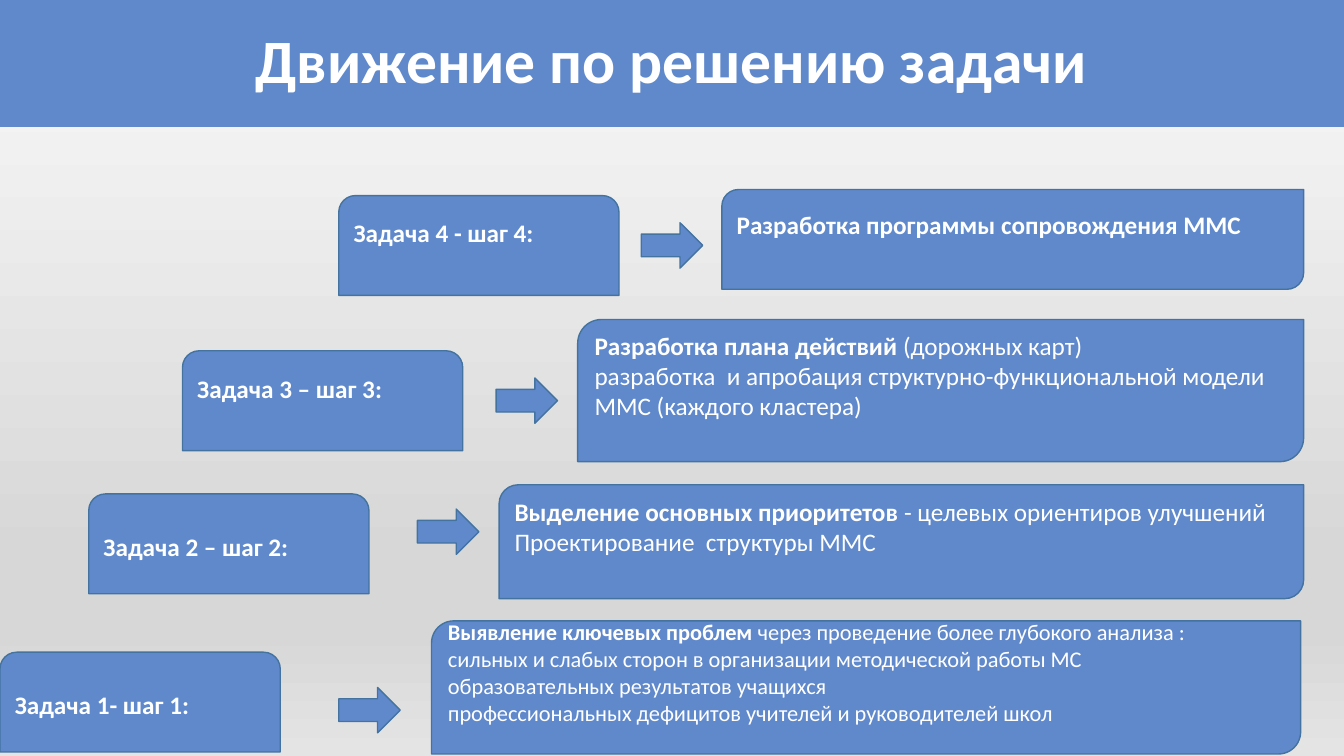
import copy
from dataclasses import dataclass

import pptx
import pptx.dml.color
import pptx.enum.shapes
import pptx.enum.text
import pptx.oxml.ns
import pptx.util

Inches = pptx.util.Inches
Pt = pptx.util.Pt
Color = pptx.dml.color.RGBColor.from_string
Shape = pptx.enum.shapes.MSO_SHAPE
Align = pptx.enum.text.PP_ALIGN


@dataclass(frozen=True)
class Theme:
    """Colours, type sizes and font of the slide."""
    fill: str = "6089CC"
    line: str = "43739E"
    text: str = "FFFFFF"
    background: tuple = ((0, "FAFAFA"), (0.74, "D7D7D7"), (0.83, "D7D7D7"), (1, "E4E4E4"))
    font: str = "Calibri"
    title: int = 44
    body: int = 18
    small: int = 16


@dataclass(frozen=True)
class Step:
    """Boxes and wording of one step; each result line is a bold and a plain part."""
    label: str
    label_box: tuple
    label_lift: float
    arrow_at: tuple
    result_box: tuple
    result: tuple
    size: int


THEME = Theme()
LABEL_SIZE = (2.78, 0.99)
ARROW_SIZE = (0.61, 0.45)
LIFT = 0.3
TITLE = "Движение по решению задачи"

STEPS = (
    Step("Задача 1- шаг 1:", (0, 6.47, *LABEL_SIZE), 0, (3.36, 6.82),
         (4.28, 6.16, 8.62, 1.32),
         (("Выявление ключевых проблем ", "через проведение более глубокого анализа :"),
          ("", "сильных и слабых сторон в организации методической работы МС"),
          ("", "образовательных результатов учащихся"),
          ("", "профессиональных дефицитов учителей и руководителей школ")),
         THEME.small),
    Step("Задача 2 – шаг 2:", (0.88, 4.9, *LABEL_SIZE), 0, (4.14, 5.05),
         (4.95, 4.81, 7.98, 1.13),
         (("Выделение основных приоритетов ", "- целевых ориентиров улучшений"),
          ("", "Проектирование  структуры ММС")),
         THEME.body),
    Step("Задача 3 – шаг 3:", (1.81, 3.48, *LABEL_SIZE), LIFT, (4.92, 3.75),
         (5.73, 3.17, 7.2, 1.41),
         (("Разработка плана действий ", "(дорожных карт)"),
          ("", "разработка  и апробация структурно-функциональной модели "
               "ММС (каждого кластера)")),
         THEME.body),
    Step("Задача 4 - шаг 4:", (3.36, 1.94, *LABEL_SIZE), LIFT, (6.36, 2.21),
         (7.16, 1.88, 5.77, 0.99),
         (("Разработка программы сопровождения ММС", ""),),
         THEME.body),
)


def style_span(span, size, bold):
    """Apply the theme's font to a run."""
    span.font.name = THEME.font
    span.font.size = Pt(size)
    span.font.bold = bold
    span.font.color.rgb = Color(THEME.text)


def paint_background(page):
    """Fill the page with the theme's vertical gradient."""
    fill = page.background.fill
    fill.gradient()
    fill.gradient_angle = 270
    stop_list = next(page.element.iter(pptx.oxml.ns.qn("a:gsLst")))
    while len(stop_list) < len(THEME.background):
        stop_list.append(copy.deepcopy(stop_list[0]))
    for stop, (position, color) in zip(fill.gradient_stops, THEME.background):
        stop.position = position
        stop.color.rgb = Color(color)


def add_title(page, box):
    """Turn the title placeholder into a banner."""
    title = page.shapes.title
    title.left, title.top, title.width, title.height = map(Inches, box)
    title.fill.solid()
    title.fill.fore_color.rgb = Color(THEME.fill)
    frame = title.text_frame
    frame.text = TITLE
    frame.auto_size = pptx.enum.text.MSO_AUTO_SIZE.NONE
    frame.vertical_anchor = pptx.enum.text.MSO_ANCHOR.MIDDLE
    para = frame.paragraphs[0]
    para.alignment = Align.CENTER
    para.line_spacing = 0.9
    style_span(para.runs[0], THEME.title, True)


def add_block(page, kind, box):
    """Add a themed preset shape."""
    block = page.shapes.add_shape(kind, *map(Inches, box))
    block.shadow.inherit = False
    block.fill.solid()
    block.fill.fore_color.rgb = Color(THEME.fill)
    block.line.color.rgb = Color(THEME.line)
    block.line.width = Pt(1)
    return block


def write_lines(block, lines, size, lift):
    """Write lines of bold and plain text, raised by a deeper bottom inset."""
    frame = block.text_frame
    frame.word_wrap = True
    frame.vertical_anchor = pptx.enum.text.MSO_ANCHOR.MIDDLE
    frame.margin_top = 0
    frame.margin_bottom = Inches(lift)
    for index, parts in enumerate(lines):
        para = frame.add_paragraph() if index else frame.paragraphs[0]
        para.alignment = Align.LEFT
        for text, bold in zip(parts, (True, False)):
            if text:
                span = para.add_run()
                span.text = text
                style_span(span, size, bold)


def add_step(page, step):
    """Add one step: its label, arrow and result."""
    label = add_block(page, Shape.ROUND_2_SAME_RECTANGLE, step.label_box)
    write_lines(label, ((step.label, ""),), THEME.body, step.label_lift)
    add_block(page, Shape.RIGHT_ARROW, (*step.arrow_at, *ARROW_SIZE))
    result = add_block(page, Shape.ROUND_2_DIAG_RECTANGLE, step.result_box)
    write_lines(result, step.result, step.size, LIFT)


def main():
    """Build and save the deck."""
    deck = pptx.Presentation()
    deck.slide_width = Inches(13.33)
    deck.slide_height = Inches(7.5)
    page = deck.slides.add_slide(deck.slide_layouts[5])
    paint_background(page)
    add_title(page, (0, 0, 13.33, 1.26))
    for step in STEPS:
        add_step(page, step)
    deck.save("out.pptx")


if __name__ == "__main__":
    main()
